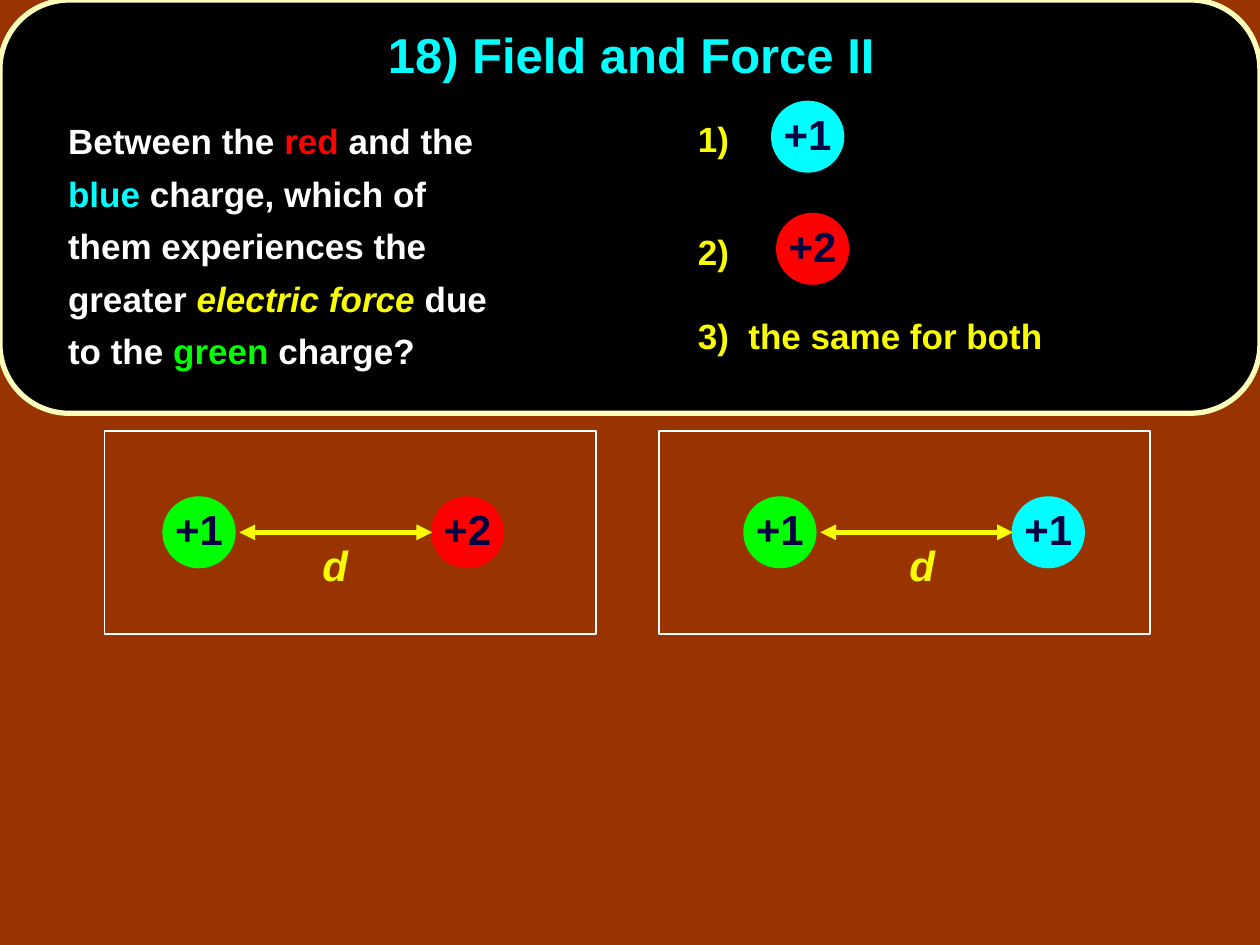
import pptx
import pptx.util
import pptx.dml.color
import pptx.enum.shapes
import pptx.enum.text
import pptx.oxml
import pptx.oxml.ns

Inches = pptx.util.Inches
Pt = pptx.util.Pt
SHAPE = pptx.enum.shapes.MSO_SHAPE
ALIGN = pptx.enum.text.PP_ALIGN
ANCHOR = pptx.enum.text.MSO_ANCHOR

BROWN, BLACK, CREAM, WHITE = "993300", "000000", "FCFEB9", "FFFFFF"
RED, GREEN, CYAN, YELLOW, NAVY = "FF0000", "00FF00", "00FFFF", "FAFD00", "000040"
CHARGE_WIDTH, CHARGE_HEIGHT = 0.54, 0.53


def color(hex_string):
    return pptx.dml.color.RGBColor.from_string(hex_string)


def add_run(paragraph, text, size, hex_string, italic=False):
    run = paragraph.add_run()
    run.text = text
    run.font.name = "Arial"
    run.font.size = Pt(size)
    run.font.bold = True
    run.font.italic = italic
    run.font.color.rgb = color(hex_string)


def add_outlined(slide, preset, left, top, width, height, fill, line, weight):
    outlined = slide.shapes.add_shape(
        preset, Inches(left), Inches(top), Inches(width), Inches(height))
    outlined.shadow.inherit = False
    if fill:
        outlined.fill.solid()
        outlined.fill.fore_color.rgb = color(fill)
    else:
        outlined.fill.background()
    outlined.line.color.rgb = color(line)
    outlined.line.width = Pt(weight)
    return outlined


def add_frame(slide, left, top, width, height):
    frame = slide.shapes.add_textbox(
        Inches(left), Inches(top), Inches(width), Inches(height)).text_frame
    frame.word_wrap = True
    return frame


def write_centered(frame, text, size, hex_string, italic=False):
    frame.vertical_anchor = ANCHOR.MIDDLE
    paragraph = frame.paragraphs[0]
    paragraph.alignment = ALIGN.CENTER
    paragraph.line_spacing = 0.9
    add_run(paragraph, text, size, hex_string, italic)


def add_charge(slide, left, top, text, fill):
    charge = add_outlined(slide, SHAPE.OVAL, left, top, CHARGE_WIDTH, CHARGE_HEIGHT,
                          fill, fill, 3)
    frame = charge.text_frame
    frame.word_wrap = False
    frame.margin_left = frame.margin_right = frame.margin_top = frame.margin_bottom = 0
    write_centered(frame, text, 24, NAVY)


def add_distance(slide, left, y, length):
    distance = slide.shapes.add_connector(
        pptx.enum.shapes.MSO_CONNECTOR.STRAIGHT,
        Inches(left), Inches(y), Inches(left + length), Inches(y))
    distance.line.color.rgb = color(YELLOW)
    distance.line.width = Pt(3)
    outline = distance.line._get_or_add_ln()
    for end in ("a:headEnd", "a:tailEnd"):
        arrowhead = pptx.oxml.ns.qn(end)
        outline.append(outline.makeelement(arrowhead, {"type": "triangle"}))
    properties = distance._element.spPr
    properties.append(properties.makeelement(pptx.oxml.ns.qn("a:effectLst"), {}))


def add_title(slide, left, top, width, height):
    write_centered(add_frame(slide, left, top, width, height),
                   "18) Field and Force II", 28, CYAN)


def add_question(slide, left, top, width, height):
    frame = add_frame(slide, left, top, width, height)
    frame.margin_left = Inches(0.54)
    paragraph = frame.paragraphs[0]
    paragraph.line_spacing = 1.25
    for text, hex_string in (
        ("Between the ", WHITE), ("red", RED), (" and the ", WHITE), ("blue", CYAN),
        (" charge, which of them experiences the greater ", WHITE),
        ("electric force", YELLOW), (" due to the ", WHITE),
        ("green", GREEN), (" charge?", WHITE),
    ):
        add_run(paragraph, text, 20, hex_string, italic=hex_string == YELLOW)


def add_answers(slide, left, top, width, height):
    frame = add_frame(slide, left, top, width, height)
    answers = (("1)", 0), ("2)", 31), ("3)  the same for both", 14.6))
    for index, (text, gap) in enumerate(answers):
        paragraph = frame.add_paragraph() if index else frame.paragraphs[0]
        paragraph.line_spacing = 1.4
        paragraph.space_before = Pt(gap)
        add_run(paragraph, text, 20, YELLOW)
    add_charge(slide, left + 0.7, top + 0.07, "+1", CYAN)
    add_charge(slide, left + 0.74, top + 0.96, "+2", RED)


def add_charge_pair(slide, left, top, width, height, green_left, label_left, text, fill):
    add_outlined(slide, SHAPE.RECTANGLE, left, top, width, height, None, WHITE, 1)
    charge_top = top + (height - CHARGE_HEIGHT) / 2
    add_charge(slide, left + green_left, charge_top, "+1", GREEN)
    add_charge(slide, left + green_left + 2.13, charge_top, text, fill)
    add_distance(slide, left + green_left + 0.59, top + height / 2, 1.53)
    label = add_frame(slide, left + label_left, top + 0.86, 0.4, 0.46)
    label.word_wrap = False
    write_centered(label, "d", 24, YELLOW, italic=True)


def main():
    deck = pptx.Presentation()
    deck.slide_width, deck.slide_height = Inches(10), Inches(7.5)
    slide = deck.slides.add_slide(deck.slide_layouts[6])
    slide.background.fill.solid()
    slide.background.fill.fore_color.rgb = color(BROWN)

    banner = add_outlined(slide, SHAPE.ROUNDED_RECTANGLE, 0, 0, 10, 3.28, BLACK, CREAM, 3)
    banner.adjustments[0] = 0.167
    add_charge_pair(slide, 0.83, 3.42, 3.9, 1.61, 0.48, 1.63, "+2", RED)
    add_charge_pair(slide, 5.23, 3.42, 3.9, 1.61, 0.69, 1.89, "+1", CYAN)
    add_answers(slide, 5.44, 0.75, 4.56, 2.23)
    add_question(slide, 0, 0.82, 4.17, 2.3)
    add_title(slide, 1.02, 0, 7.98, 0.92)
    deck.save("out.pptx")


if __name__ == "__main__":
    main()
